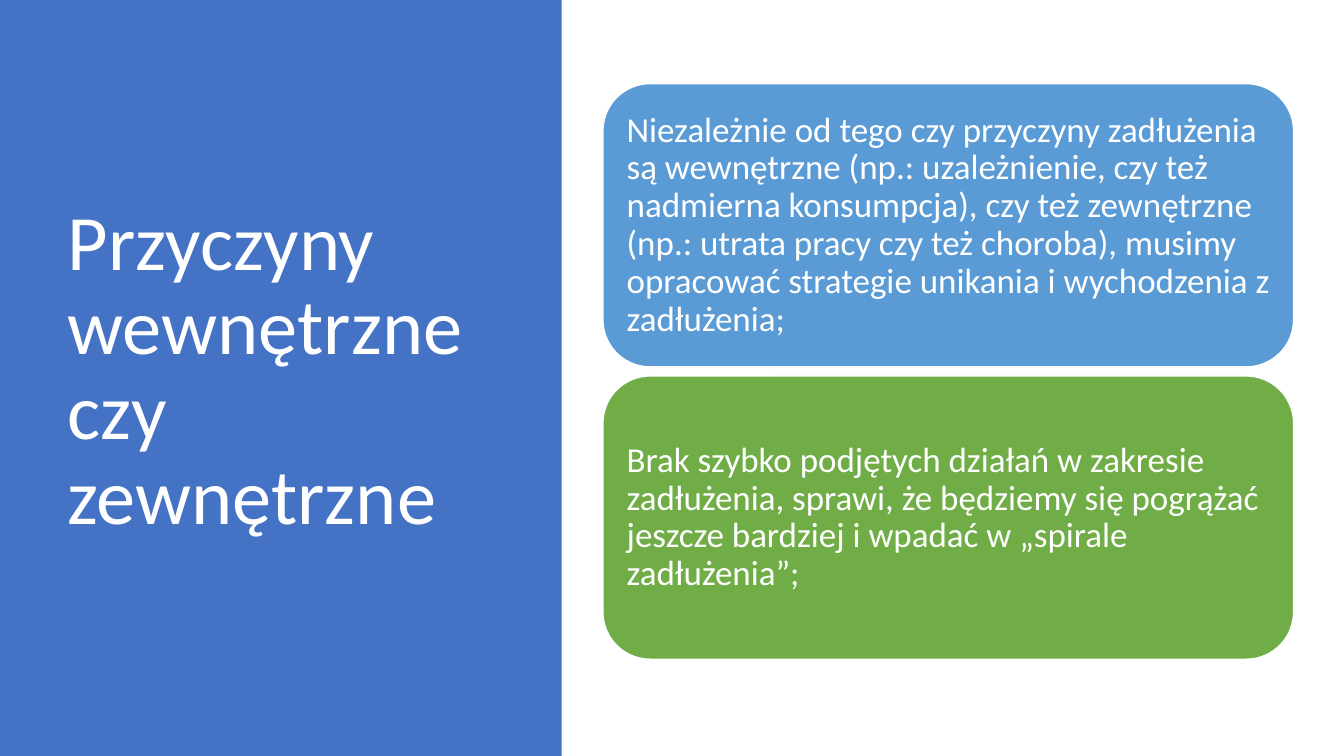
from pptx import Presentation
from pptx.dml.color import RGBColor
from pptx.enum.shapes import MSO_SHAPE
from pptx.enum.text import MSO_ANCHOR, MSO_AUTO_SIZE, PP_ALIGN
from pptx.util import Inches, Pt

RECT, ROUND = MSO_SHAPE.RECTANGLE, MSO_SHAPE.ROUNDED_RECTANGLE
MIDDLE, LEFT, NO_FIT = MSO_ANCHOR.MIDDLE, PP_ALIGN.LEFT, MSO_AUTO_SIZE.NONE

COLORS = {"panel": "4472C4", "blue": "5B9BD5", "green": "70AD47", "white": "FFFFFF"}
FONT = "Calibri"
TITLE = "Przyczyny wewnętrzne czy zewnętrzne"
CARDS = [
    ("blue", "Niezależnie od tego czy przyczyny zadłużenia są wewnętrzne "
             "(np.: uzależnienie, czy też nadmierna konsumpcja), czy też zewnętrzne "
             "(np.: utrata pracy czy też choroba), musimy opracować strategie "
             "unikania i wychodzenia z zadłużenia;"),
    ("green", "Brak szybko podjętych działań w zakresie zadłużenia, sprawi, "
              "że będziemy się pogrążać jeszcze bardziej i wpadać "
              "w „spirale zadłużenia”;"),
]
WIDTH, HEIGHT = 13.33, 7.5
PANEL_W = 5.57
TITLE_BOX = (0.57, 0.68, 4.16, 6.02)
CARD_X, CARD_Y, CARD_W, CARD_H = 5.98, 0.83, 6.85, 2.81
GAP = 0.09


def color(name):
    return RGBColor.from_string(COLORS[name])


def add_block(slide, kind, box, fill):
    shape = slide.shapes.add_shape(kind, *map(Inches, box))
    shape.shadow.inherit = False
    shape.fill.solid()
    shape.fill.fore_color.rgb = color(fill)
    shape.line.fill.background()
    return shape


def write(shape, text, size):
    frame = shape.text_frame
    frame.text = text
    frame.word_wrap = True
    frame.auto_size = NO_FIT
    frame.vertical_anchor = MIDDLE
    para = frame.paragraphs[0]
    para.alignment = LEFT
    para.line_spacing = 0.9
    font = para.runs[0].font
    font.name, font.size = FONT, Pt(size)
    font.color.rgb = color("white")


def main():
    deck = Presentation()
    deck.slide_width, deck.slide_height = Inches(WIDTH), Inches(HEIGHT)
    slide = deck.slides.add_slide(deck.slide_layouts[5])

    title = slide.shapes.title
    title.left, title.top, title.width, title.height = map(Inches, TITLE_BOX)
    write(title, TITLE, 56)

    panel = add_block(slide, RECT, (0, 0, PANEL_W, HEIGHT), "panel")
    title.element.addprevious(panel.element)

    for row, (fill, text) in enumerate(CARDS):
        top = CARD_Y + row * (CARD_H + GAP)
        card = add_block(slide, ROUND, (CARD_X, top, CARD_W, CARD_H), fill)
        card.line.color.rgb = color("white")
        card.line.width = Pt(1)
        write(card, text, 25)

    deck.save("out.pptx")


if __name__ == "__main__":
    main()
